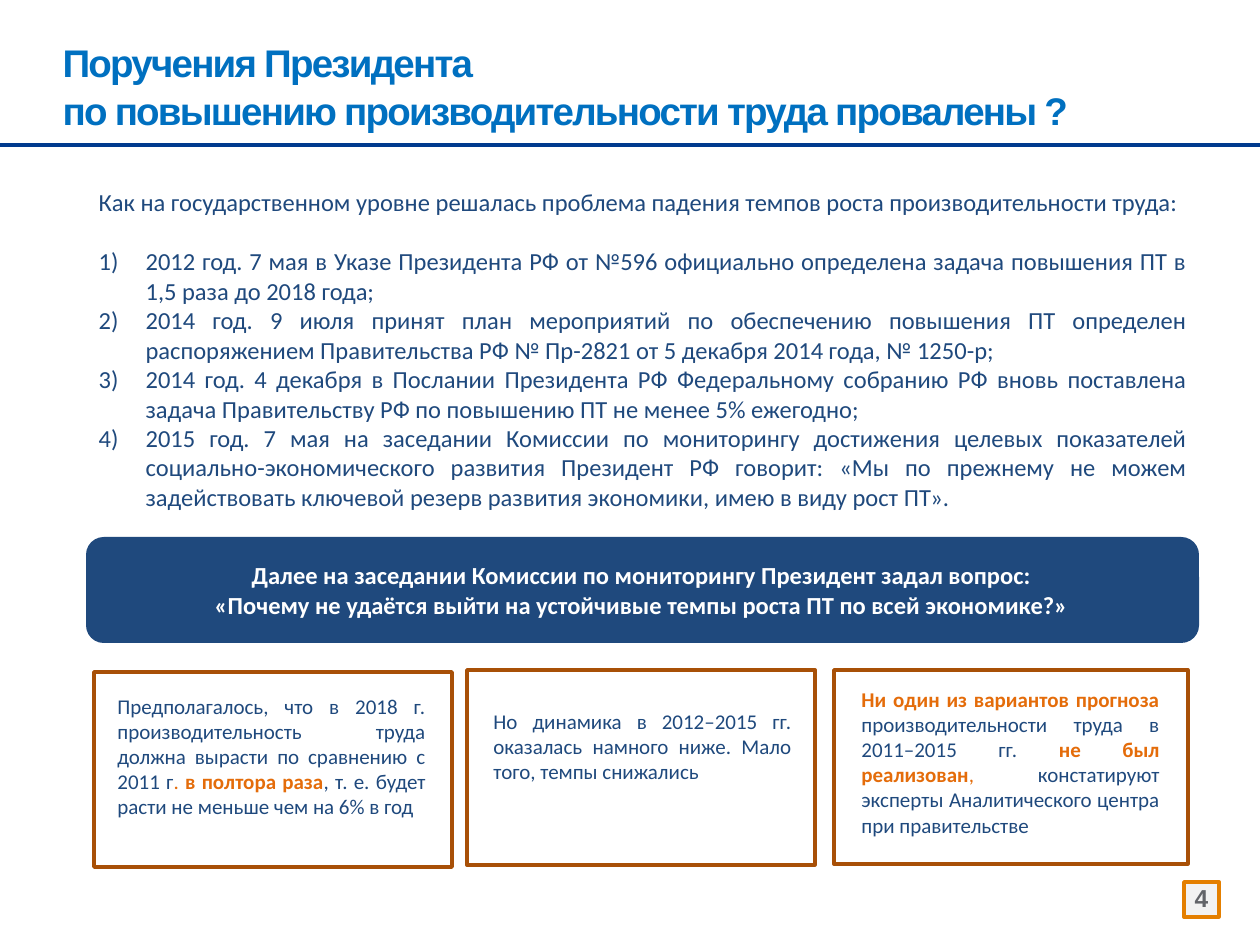
"""Build the slide on presidential instructions for labour productivity."""
from pptx import Presentation
from pptx.dml.color import RGBColor
from pptx.enum.shapes import MSO_CONNECTOR, MSO_SHAPE
from pptx.enum.text import MSO_ANCHOR, MSO_AUTO_SIZE, PP_ALIGN
from pptx.oxml.ns import qn
from pptx.util import Pt
from lxml import etree

STRAIGHT = MSO_CONNECTOR.STRAIGHT
RECTANGLE, ROUNDED = MSO_SHAPE.RECTANGLE, MSO_SHAPE.ROUNDED_RECTANGLE
TOP, MIDDLE, BOTTOM = MSO_ANCHOR.TOP, MSO_ANCHOR.MIDDLE, MSO_ANCHOR.BOTTOM
LEFT, CENTER, JUSTIFY = PP_ALIGN.LEFT, PP_ALIGN.CENTER, PP_ALIGN.JUSTIFY
NO_AUTOFIT = MSO_AUTO_SIZE.NONE
EMU_PER_PX = 914400 / 126

THEME = {
    "title": {"name": "Arial", "size": 22, "color": "0070C0", "bold": True},
    "body": {"name": "Calibri", "size": 14, "color": "1F497D", "bold": False},
    "banner": {"name": "Calibri", "size": 14, "color": "FFFFFF", "bold": True},
    "card": {"name": "Calibri", "size": 12, "color": "1F497D", "bold": False},
    "accent": {"name": "Calibri", "size": 12, "color": "E46C0A", "bold": False},
    "strong": {"name": "Calibri", "size": 12, "color": "E46C0A", "bold": True},
    "number": {"name": "Arial", "size": 14, "color": "626469", "bold": True},
    "rule": "003A8E",
    "banner_fill": "1F497D",
    "card_line": "A85007",
    "number_fill": "F2F2F2",
    "number_line": "E47F00",
}


def px(*lengths):
    return [round(length * EMU_PER_PX) for length in lengths]


def write(paragraph, runs, alignment):
    paragraph.alignment = alignment
    paragraph.space_before = Pt(0)
    for text, style in runs:
        run = paragraph.add_run()
        run.text = text
        values = dict(THEME[style])
        run.font.color.rgb = RGBColor.from_string(values.pop("color"))
        values["size"] = Pt(values["size"])
        for name, value in values.items():
            setattr(run.font, name, value)


presentation = Presentation()
presentation.slide_width, presentation.slide_height = px(1260, 945)
slide = presentation.slides.add_slide(presentation.slide_layouts[1])
title, body = slide.placeholders

rule = slide.shapes.add_connector(STRAIGHT, *px(0, 145, 1260, 145))
rule.line.color.rgb = RGBColor.from_string(THEME["rule"])
rule.line.width = Pt(2.5)
etree.SubElement(rule._element.spPr, qn("a:effectLst"))

for placeholder, box, anchor in (
    (title, (50, 33, 1173, 107), BOTTOM),
    (body, (86, 181, 1114, 339), TOP),
):
    placeholder.left, placeholder.top, placeholder.width, placeholder.height = px(*box)
    placeholder.text_frame.vertical_anchor = anchor
    placeholder.text_frame.auto_size = NO_AUTOFIT
    placeholder.text_frame.word_wrap = True

heading = title.text_frame.paragraphs[0]
heading.line_spacing = 1.06
write(heading, [("Поручения Президента", "title")], LEFT)
heading.add_line_break()
write(heading, [("по повышению производительности труда провалены ?", "title")], LEFT)
for run in heading.runs:
    run.font._element.set("spc", "-100")

intro = body.text_frame.paragraphs[0]
intro_properties = intro._p.get_or_add_pPr()
intro_properties.set("marL", "0")
intro_properties.set("indent", "0")
etree.SubElement(intro_properties, qn("a:buNone"))
write(intro, [(
    "Как на государственном уровне решалась проблема падения темпов роста производительности труда:",
    "body",
)], LEFT)
intro.space_after = Pt(17)

instructions = [
    "2012 год. 7 мая в Указе Президента РФ от №596 официально определена задача повышения ПТ в 1,5 раза до 2018 года;",
    "2014 год. 9 июля принят план мероприятий по обеспечению повышения ПТ определен распоряжением Правительства РФ № Пр-2821 от 5 декабря 2014 года, № 1250-р;",
    "2014 год. 4 декабря в Послании Президента РФ Федеральному собранию РФ вновь поставлена задача Правительству РФ по повышению ПТ не менее 5% ежегодно;",
    "2015 год. 7 мая на заседании Комиссии по мониторингу достижения целевых показателей социально-экономического развития Президент РФ говорит: «Мы по прежнему не можем задействовать ключевой резерв развития экономики, имею в виду рост ПТ».",
]
(hanging,) = px(47)
for instruction in instructions:
    paragraph = body.text_frame.add_paragraph()
    properties = paragraph._p.get_or_add_pPr()
    properties.set("marL", str(hanging))
    properties.set("indent", str(-hanging))
    etree.SubElement(properties, qn("a:buFont"), typeface="+mj-lt")
    etree.SubElement(properties, qn("a:buAutoNum"), type="arabicParenR")
    write(paragraph, [(instruction, "body")], JUSTIFY)

panels = [
    (ROUNDED, (86, 537, 1113, 106), "banner_fill", None),
    (RECTANGLE, (94, 672, 358, 195), None, "card_line"),
    (RECTANGLE, (467, 670, 348, 195), None, "card_line"),
    (RECTANGLE, (834, 670, 354, 194), None, "card_line"),
    (RECTANGLE, (1184, 882, 35, 35), "number_fill", "number_line"),
]
for outline, box, fill, line in panels:
    panel = slide.shapes.add_shape(outline, *px(*box))
    panel.shadow.inherit = False
    if fill:
        panel.fill.solid()
        panel.fill.fore_color.rgb = RGBColor.from_string(THEME[fill])
    else:
        panel.fill.background()
    if line:
        panel.line.color.rgb = RGBColor.from_string(THEME[line])
        panel.line.width = Pt(2)
    else:
        panel.line.fill.background()

number_frame = panel.text_frame
(inset,) = px(10)
for name, value in {
    "margin_left": inset, "margin_right": inset, "margin_top": inset,
    "margin_bottom": inset, "vertical_anchor": MIDDLE, "word_wrap": False,
}.items():
    setattr(number_frame, name, value)
number_frame.paragraphs[0].line_spacing = 0.9
write(number_frame.paragraphs[0], [("4", "number")], CENTER)

texts = [
    ((105, 687, 333, 140), JUSTIFY, [[
        ("Предполагалось, что в 2018 г. производительность труда должна вырасти по сравнению с 2011 г", "card"),
        (". ", "accent"),
        ("в полтора раза", "strong"),
        (", т. е. будет расти не меньше чем на 6% в год", "card"),
    ]]),
    ((481, 702, 323, 89), JUSTIFY, [[
        ("Но динамика в 2012–2015 гг. оказалась намного ниже. Мало того, темпы снижались", "card"),
    ]]),
    ((849, 680, 323, 165), JUSTIFY, [[
        ("Ни один из вариантов прогноза ", "strong"),
        ("производительности труда в 2011–2015 гг. ", "card"),
        ("не был реализован", "strong"),
        (",", "accent"),
        (" констатируют эксперты Аналитического центра при правительстве", "card"),
    ]]),
    ((110, 554, 1063, 72), CENTER, [
        [("Далее на заседании Комиссии по мониторингу Президент задал вопрос:", "banner")],
        [("«Почему не удаётся выйти на устойчивые темпы роста ПТ по всей экономике?»", "banner")],
    ]),
]
for box, alignment, paragraphs in texts:
    text_frame = slide.shapes.add_textbox(*px(*box)).text_frame
    text_frame.word_wrap = True
    for index, runs in enumerate(paragraphs):
        paragraph = text_frame.add_paragraph() if index else text_frame.paragraphs[0]
        write(paragraph, runs, alignment)

presentation.save("out.pptx")
